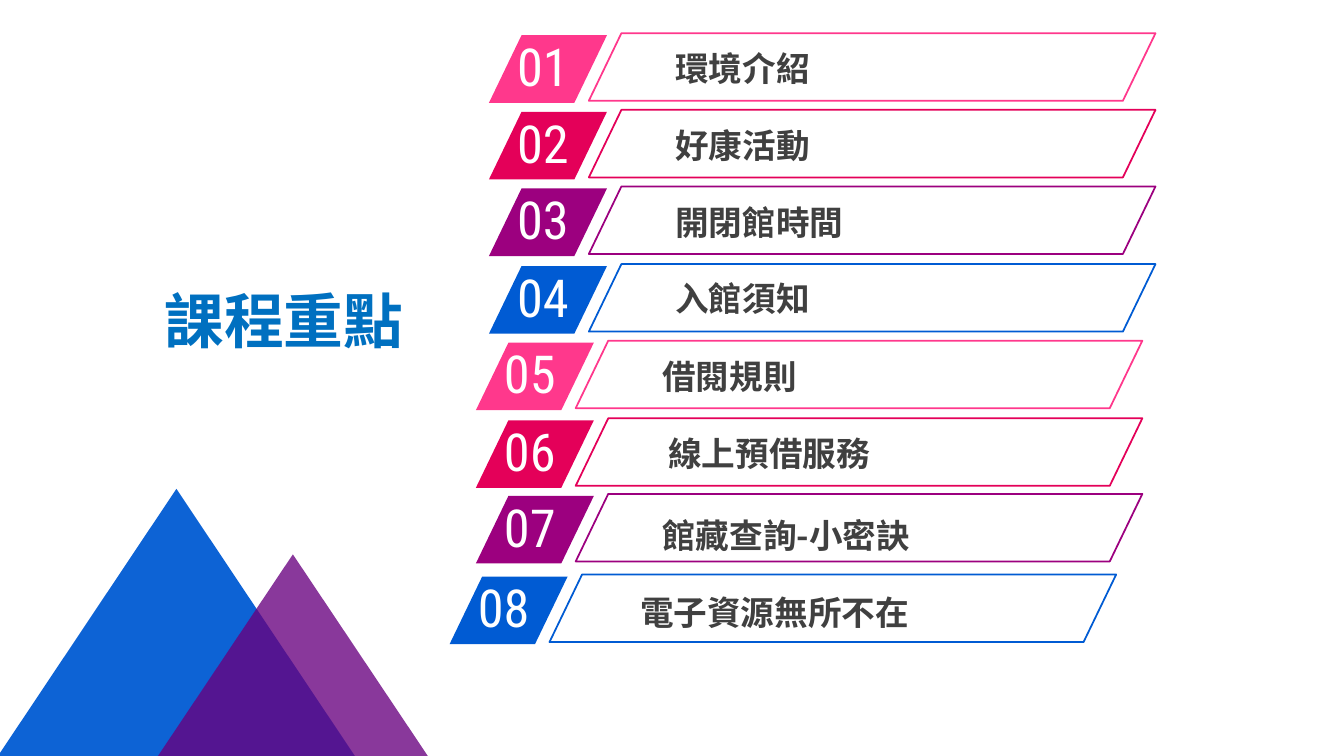
from pptx import Presentation, util as u
from pptx.dml import color
from pptx.enum import shapes, text
from pptx.oxml import ns
from lxml import etree

CJK = "Noto Sans CJK SC"
PINK, RED, PURPLE, BLUE = "FF388C", "E40059", "9C007F", "005BD3"
TITLE = dict(name=CJK, size=u.Pt(42.6), bold=True)
NUMBER = dict(name="Roboto Condensed", size=u.Pt(37.4))
LABEL = dict(name=CJK, size=u.Pt(24), bold=True)
ROW_COLORS = [PINK, RED, PURPLE, BLUE]
ROWS = [
    ("環境介紹", 4.85, 0.35, 1.75, 0.08),
    ("好康活動", 4.85, 1.11, 1.75, 0.08),
    ("開閉館時間", 4.85, 1.87, 1.75, 0.08),
    ("入館須知", 4.85, 2.64, 1.75, 0.07),
    ("借閱規則", 4.72, 3.4, 1.75, 0.08),
    ("線上預借服務", 4.72, 4.17, 1.81, 0.08),
    ("館藏查詢-小密訣", 4.72, 4.92, 1.75, 0.14),
    ("電子資源無所不在", 4.46, 5.72, 1.79, 0.1),
]


def rgb(value):
    """Turn a hex string into a colour."""
    return color.RGBColor.from_string(value)


def add_text(page, words, box, style, ink, align=None, anchor=text.MSO_ANCHOR.TOP):
    """Place one line of styled text in a box."""
    frame = page.shapes.add_textbox(*map(u.Inches, box)).text_frame
    frame.word_wrap = True
    frame.vertical_anchor = anchor
    para = frame.paragraphs[0]
    para.alignment = align
    span = para.add_run()
    span.text = words
    for key, value in style.items():
        setattr(span.font, key, value)
    span.font.color.rgb = rgb(ink)
    east = etree.SubElement(span.font._element, ns.qn("a:ea"))
    east.set("typeface", style["name"])


def add_figure(page, kind, box, fill=None, line=None, opacity=100):
    """Place a preset shape with a fill or an outline."""
    figure = page.shapes.add_shape(kind, *map(u.Inches, box))
    figure.shadow.inherit = False
    if fill:
        figure.fill.solid()
        figure.fill.fore_color.rgb = rgb(fill)
        if opacity < 100:
            tint = figure.fill._xPr.find(".//" + ns.qn("a:srgbClr"))
            etree.SubElement(tint, ns.qn("a:alpha")).set("val", str(opacity * 1000))
    else:
        figure.fill.background()
    if line:
        figure.line.color.rgb = rgb(line)
        figure.line.width = u.Pt(1.25)
    else:
        figure.line.fill.background()
    return figure


def add_row(page, number, label, left, top, indent, drop, tone):
    """Draw a numbered tab with its outlined label."""
    slanted = shapes.MSO_SHAPE.PARALLELOGRAM
    tab = add_figure(page, slanted, (left, top, 1.17, 0.67), fill=tone)
    add_text(page, f"{number:02d}", (left + 0.18, top - 0.06, 1.12, 0.73), NUMBER, "FFFFFF")
    add_text(page, label, (left + indent, top + drop, 4.12, 0.5), LABEL, "404040")
    frame = add_figure(page, slanted, (left + 0.99, top - 0.02, 5.62, 0.67), line=tone)
    for figure in (tab, frame):
        figure.adjustments[0] = 0.482


def add_peaks(page, left, top):
    """Draw the two overlapping triangles."""
    peak = shapes.MSO_SHAPE.ISOSCELES_TRIANGLE
    add_figure(page, peak, (left, top, 3.78, 2.83), fill=BLUE, opacity=95)
    add_figure(page, peak, (left + 1.62, top + 0.65, 2.85, 2.13), fill="68007F", opacity=78)


def main():
    """Build the agenda slide and save the deck."""
    deck = Presentation()
    deck.slide_width, deck.slide_height = u.Inches(13.33), u.Inches(7.5)
    page = deck.slides.add_slide(deck.slide_layouts[6])
    add_text(page, "課程重點", (1.17, 2.81, 3.29, 0.72), TITLE, "0070C0",
             text.PP_ALIGN.CENTER, text.MSO_ANCHOR.MIDDLE)
    for index, row in enumerate(ROWS):
        add_row(page, index + 1, *row, ROW_COLORS[index % len(ROW_COLORS)])
    add_peaks(page, -0.14, 4.85)
    deck.save("out.pptx")


if __name__ == "__main__":
    main()
